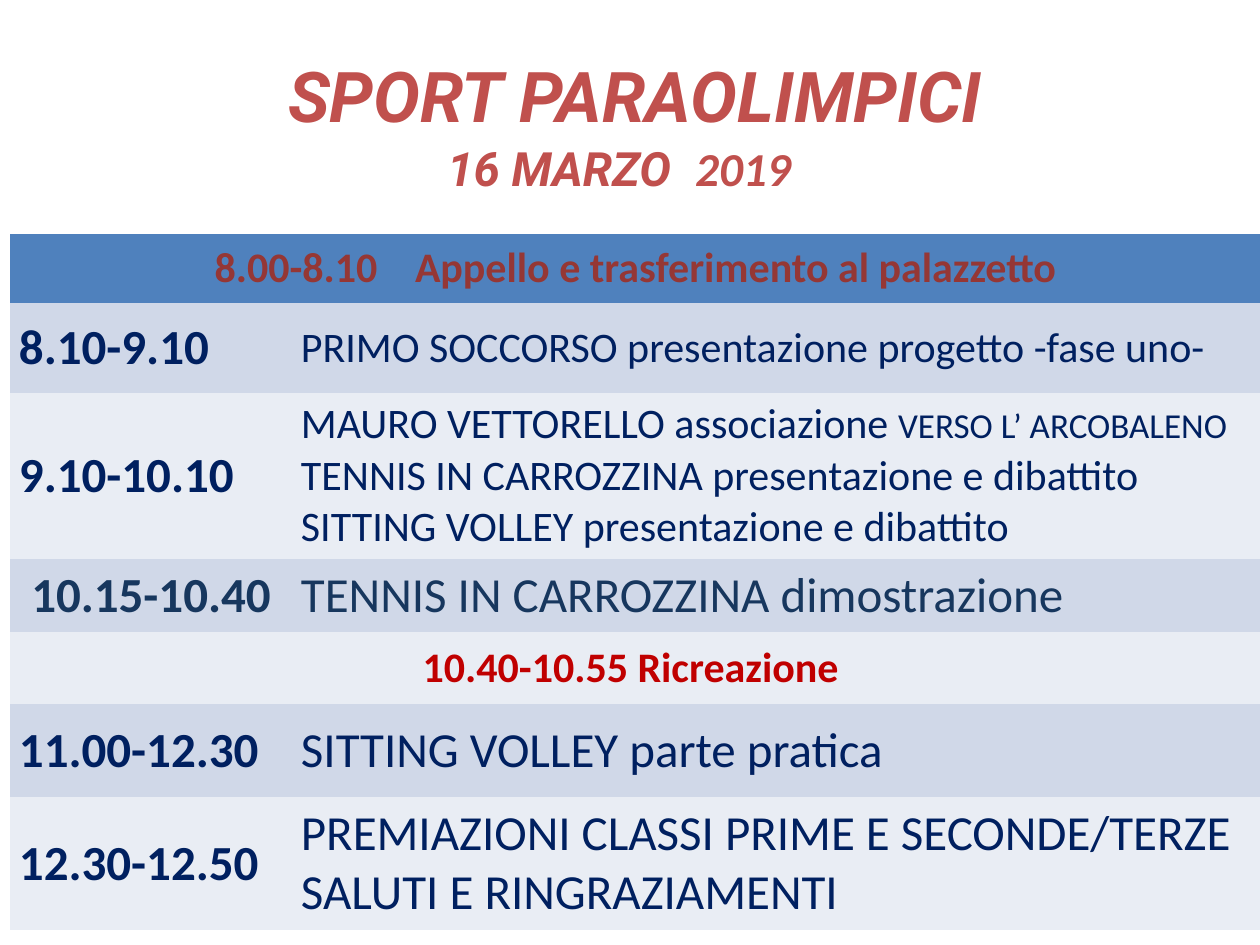
"""Build the timetable slide for the Paralympic sports day."""
from dataclasses import dataclass

from pptx import Presentation
from pptx.dml.color import RGBColor
from pptx.enum.text import MSO_ANCHOR, PP_ALIGN
from pptx.oxml.ns import qn
from pptx.table import Table, _Cell
from pptx.text.text import _Paragraph
from pptx.util import Emu, Pt

PX_PER_INCH = 126
CORAL = RGBColor(0xC0, 0x50, 0x4D)
BRICK = RGBColor(0x95, 0x37, 0x35)
RED = RGBColor(0xC0, 0x00, 0x00)
NAVY = RGBColor(0x00, 0x20, 0x60)
SLATE = RGBColor(0x17, 0x37, 0x5E)
BLUE = RGBColor(0x4F, 0x81, 0xBD)
BANDS = (RGBColor(0xE9, 0xED, 0xF4), RGBColor(0xD0, 0xD8, 0xE8))
PLAIN_TABLE_STYLE = "{2D5ABB26-0587-4C30-8999-92F81FD0307C}"


@dataclass(frozen=True)
class Span:
    """A piece of text with one size; gap is extra letter spacing in points."""
    text: str
    size: int
    font: str = "Calibri"
    bold: bool = False
    italic: bool = False
    gap: int = 0


@dataclass(frozen=True)
class Slot:
    """A timetable row; one without a time spans both columns."""
    height: int
    lines: tuple[tuple[Span, ...], ...]
    time: str = ""
    color: RGBColor = NAVY
    time_align: PP_ALIGN = PP_ALIGN.LEFT


SLOTS = (
    Slot(69, ((Span("8.00-8.10", 24, bold=True), Span(" ", 24, bold=True, gap=16),
               Span("Appello e trasferimento al palazzetto", 24, bold=True)),), color=BRICK),
    Slot(90, ((Span("PRIMO SOCCORSO presentazione progetto -fase uno-", 24),),), "8.10-9.10"),
    Slot(166, ((Span("MAURO VETTORELLO associazione ", 24), Span("VERSO L’ ARCOBALENO", 20)),
               (Span("TENNIS IN CARROZZINA presentazione e dibattito", 24),),
               (Span("SITTING VOLLEY presentazione e dibattito", 24),)), "9.10-10.10"),
    Slot(73, ((Span("TENNIS IN CARROZZINA dimostrazione", 28),),), "10.15-10.40",
         SLATE, PP_ALIGN.CENTER),
    Slot(72, ((Span("10.40-10.55 Ricreazione ", 24, bold=True),),), color=RED),
    Slot(93, ((Span("SITTING VOLLEY parte pratica", 28),),), "11.00-12.30"),
    Slot(133, ((Span("PREMIAZIONI CLASSI PRIME E SECONDE/TERZE", 28),),
               (Span("SALUTI E RINGRAZIAMENTI", 28),)), "12.30-12.50"),
)
TITLE_LINES = (
    (Span(" ", 48, "Roboto", True, True), Span("SPORT PARAOLIMPICI", 40, "Roboto", True, True)),
    (Span("16 MARZO", 27, "Roboto", True, True), Span(" ", 27, "Roboto", True, True, 7),
     Span("2019 ", 27, "Calibri", True, True)),
)


def px(length: int) -> Emu:
    """Turn pixels into EMU."""
    return Emu(round(length * 914400 / PX_PER_INCH))


def write_line(paragraph: _Paragraph, spans: tuple[Span, ...], color: RGBColor) -> None:
    """Append formatted spans to a paragraph."""
    for span in spans:
        run = paragraph.add_run()
        run.text = span.text
        run.font.name = span.font
        run.font.size = Pt(span.size)
        run.font.bold = span.bold
        run.font.italic = span.italic
        run.font.color.rgb = color
        if span.gap:
            run.font._element.set("spc", str(span.gap * 100))


def fill_cell(cell: _Cell, lines: tuple[tuple[Span, ...], ...], color: RGBColor,
              align: PP_ALIGN, background: RGBColor) -> None:
    """Write the lines of one cell and paint it."""
    cell.fill.solid()
    cell.fill.fore_color.rgb = background
    cell.vertical_anchor = MSO_ANCHOR.MIDDLE
    cell.margin_left = cell.margin_right = px(9)
    cell.margin_top = cell.margin_bottom = px(6)
    frame = cell.text_frame
    for index, spans in enumerate(lines):
        paragraph = frame.add_paragraph() if index else frame.paragraphs[0]
        paragraph.alignment = align
        write_line(paragraph, spans, color)


def fill_timetable(timetable: Table) -> None:
    """Size the grid and write every slot."""
    timetable._tbl.tblPr.find(qn("a:tableStyleId")).text = PLAIN_TABLE_STYLE
    for column, width in zip(timetable.columns, (282, 969)):
        column.width = px(width)
    for index, slot in enumerate(SLOTS):
        timetable.rows[index].height = px(slot.height)
        hour, activity = timetable.cell(index, 0), timetable.cell(index, 1)
        background = BANDS[index % 2] if index else BLUE
        if slot.time:
            fill_cell(hour, ((Span(slot.time, 28, bold=True),),), slot.color,
                      slot.time_align, background)
            fill_cell(activity, slot.lines, slot.color, PP_ALIGN.LEFT, background)
        else:
            hour.merge(activity)
            fill_cell(hour, slot.lines, slot.color, PP_ALIGN.CENTER, background)


def main() -> None:
    """Build and save the slide."""
    deck = Presentation()
    deck.slide_width, deck.slide_height = px(1260), px(945)
    slide = deck.slides.add_slide(deck.slide_layouts[6])

    title = slide.shapes.add_textbox(px(-4), px(26), px(1257), px(183)).text_frame
    title.word_wrap = True
    title.vertical_anchor = MSO_ANCHOR.MIDDLE
    heading = title.paragraphs[0]
    heading.alignment = PP_ALIGN.CENTER
    heading.font.size = Pt(40)
    for index, spans in enumerate(TITLE_LINES):
        if index:
            heading.add_line_break()
        write_line(heading, spans, CORAL)

    height = sum(slot.height for slot in SLOTS)
    fill_timetable(slide.shapes.add_table(
        len(SLOTS), 2, px(10), px(234), px(1251), px(height)).table)
    deck.save("out.pptx")


if __name__ == "__main__":
    main()
